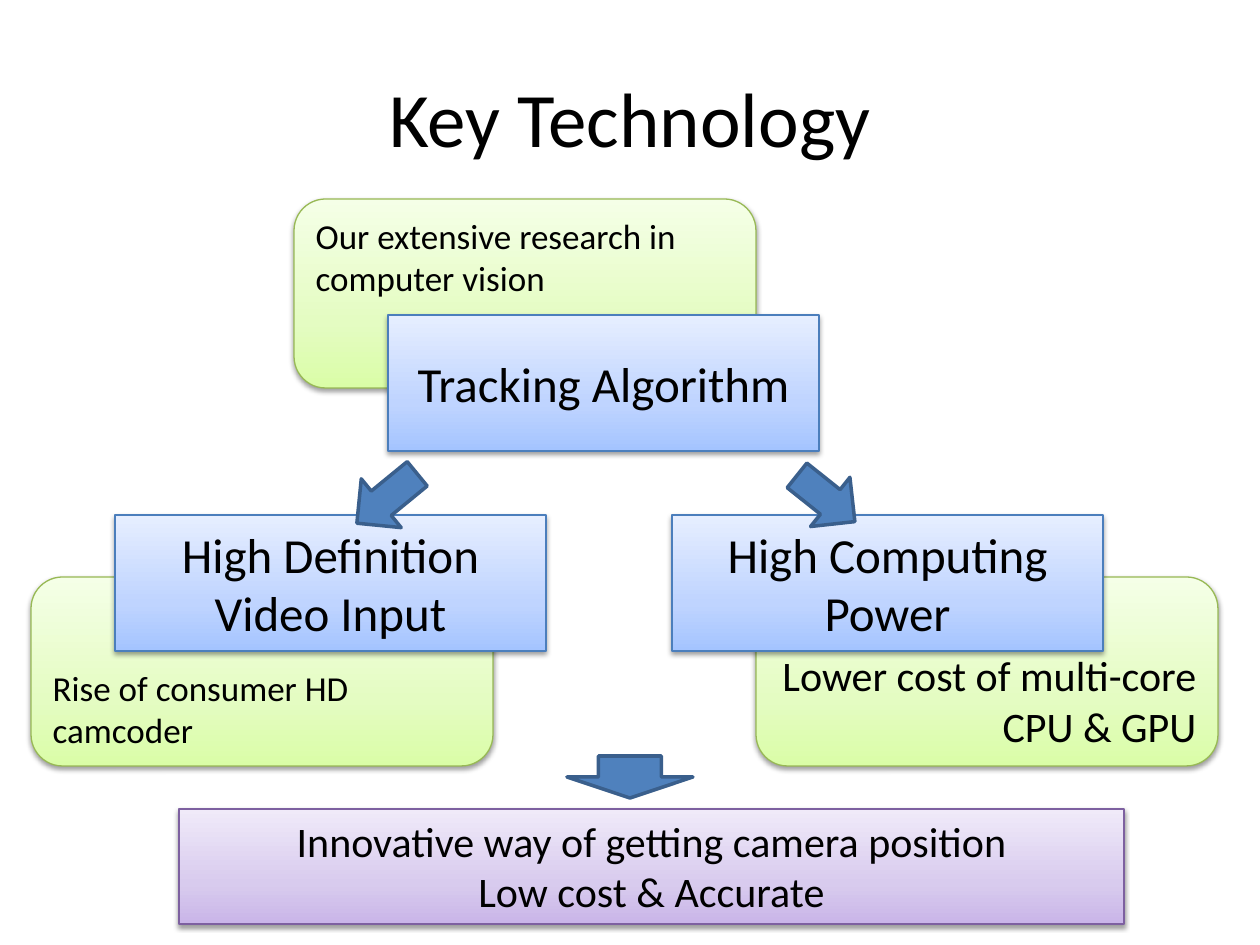
import copy

import pptx
import pptx.dml.color
import pptx.enum.shapes
import pptx.enum.text
import pptx.util
from lxml import etree

SHAPES = pptx.enum.shapes.MSO_SHAPE
ALIGN = pptx.enum.text.PP_ALIGN
ANCHOR = pptx.enum.text.MSO_ANCHOR
DRAWING = "{http://schemas.openxmlformats.org/drawingml/2006/main}"
PX = 914400 / 126


class Theme:
    font = "Calibri"
    text = "000000"
    title, box, result, note = 44, 28, 24, 20
    # gradient stops from bottom to top, then outline
    green = (("DAFDA7", "E4FCC2", "F5FFE7"), "98B955")
    blue = (("A4C4FF", "BFD4FF", "E6EEFF"), "4B7EBC")
    purple = (("C9B5E8", "D8CBEE", "F0EAF9"), "7D60A0")
    arrow_fill, arrow_line = "4F81BD", "3A5F8C"
    shadow = "000000"


TITLE = "Key Technology"
TITLE_PLACE = (63, 38, 1134, 158)
NOTE_SIZE = (462, 189)
BOX_SIZE = (431, 136)
# text, left, top, type size, alignment, anchor
NOTES = [
    ("Lower cost of multi-core CPU & GPU", 756, 577, Theme.result, ALIGN.RIGHT, ANCHOR.BOTTOM),
    ("Rise of consumer HD camcoder", 31, 577, Theme.note, ALIGN.LEFT, ANCHOR.BOTTOM),
    ("Our extensive research in computer vision", 294, 199, Theme.note, ALIGN.LEFT, ANCHOR.TOP),
]
BOXES = [
    ("High Definition Video Input", 115, 515),
    ("High Computing Power", 672, 515),
    ("Tracking Algorithm", 388, 315),
]
RESULT = "Innovative way of getting camera position\nLow cost & Accurate"
RESULT_PLACE = (179, 809, 945, 115)
# shape, place, rotation
ARROWS = [
    (SHAPES.RIGHT_ARROW, (348, 467, 78, 63), 140.7),
    (SHAPES.RIGHT_ARROW, (789, 467, 74, 63), 38.6),
    (SHAPES.DOWN_ARROW, (567, 756, 126, 42), 0),
]


def emu(place):
    return [round(length * PX) for length in place]


def rgb(value):
    return pptx.dml.color.RGBColor.from_string(value)


def write_text(shape, text, size, align=ALIGN.CENTER, anchor=ANCHOR.MIDDLE):
    frame = shape.text_frame
    frame.text = text
    frame.word_wrap = True
    frame.vertical_anchor = anchor
    for paragraph in frame.paragraphs:
        paragraph.alignment = align
        for run in paragraph.runs:
            run.font.name = Theme.font
            run.font.size = pptx.util.Pt(size)
            run.font.color.rgb = rgb(Theme.text)


def add_shape(slide, kind, place, line_color, line_width):
    shape = slide.shapes.add_shape(kind, *emu(place))
    shape.shadow.inherit = False
    shape.line.color.rgb = rgb(line_color)
    shape.line.width = pptx.util.Pt(line_width)
    return shape


def fill_gradient(shape, colors):
    shape.fill.gradient()
    shape.fill.gradient_angle = 90
    stop_list = next(shape._element.spPr.iter(DRAWING + "gsLst"))
    stop_list.append(copy.deepcopy(stop_list[-1]))
    for stop, color, position in zip(shape.fill.gradient_stops, colors, (0, 0.35, 1)):
        stop.color.rgb = rgb(color)
        stop.position = position


def add_shadow(shape):
    effects = shape._element.spPr.find(DRAWING + "effectLst")
    shadow = etree.SubElement(
        effects, DRAWING + "outerShdw", blurRad=str(pptx.util.Pt(3.1)),
        dist=str(pptx.util.Pt(1.6)), dir="5400000", rotWithShape="0")
    color = etree.SubElement(shadow, DRAWING + "srgbClr", val=Theme.shadow)
    etree.SubElement(color, DRAWING + "alpha", val="38000")


def add_panel(slide, kind, place, palette, text, size, **text_format):
    colors, line_color = palette
    panel = add_shape(slide, kind, place, line_color, 0.75)
    fill_gradient(panel, colors)
    add_shadow(panel)
    write_text(panel, text, size, **text_format)


def main():
    presentation = pptx.Presentation()
    presentation.slide_width = pptx.util.Inches(10)
    presentation.slide_height = pptx.util.Inches(7.5)
    slide = presentation.slides.add_slide(presentation.slide_layouts[5])

    title = slide.shapes.title
    title.left, title.top, title.width, title.height = emu(TITLE_PLACE)
    write_text(title, TITLE, Theme.title)

    for text, left, top, size, align, anchor in NOTES:
        add_panel(slide, SHAPES.ROUNDED_RECTANGLE, (left, top, *NOTE_SIZE),
                  Theme.green, text, size, align=align, anchor=anchor)
    for text, left, top in BOXES:
        add_panel(slide, SHAPES.RECTANGLE, (left, top, *BOX_SIZE),
                  Theme.blue, text, Theme.box)
    add_panel(slide, SHAPES.RECTANGLE, RESULT_PLACE, Theme.purple,
              RESULT, Theme.result, anchor=ANCHOR.TOP)

    for kind, place, rotation in ARROWS:
        arrow = add_shape(slide, kind, place, Theme.arrow_line, 2)
        arrow.fill.solid()
        arrow.fill.fore_color.rgb = rgb(Theme.arrow_fill)
        arrow.rotation = rotation

    presentation.save("out.pptx")


if __name__ == "__main__":
    main()
